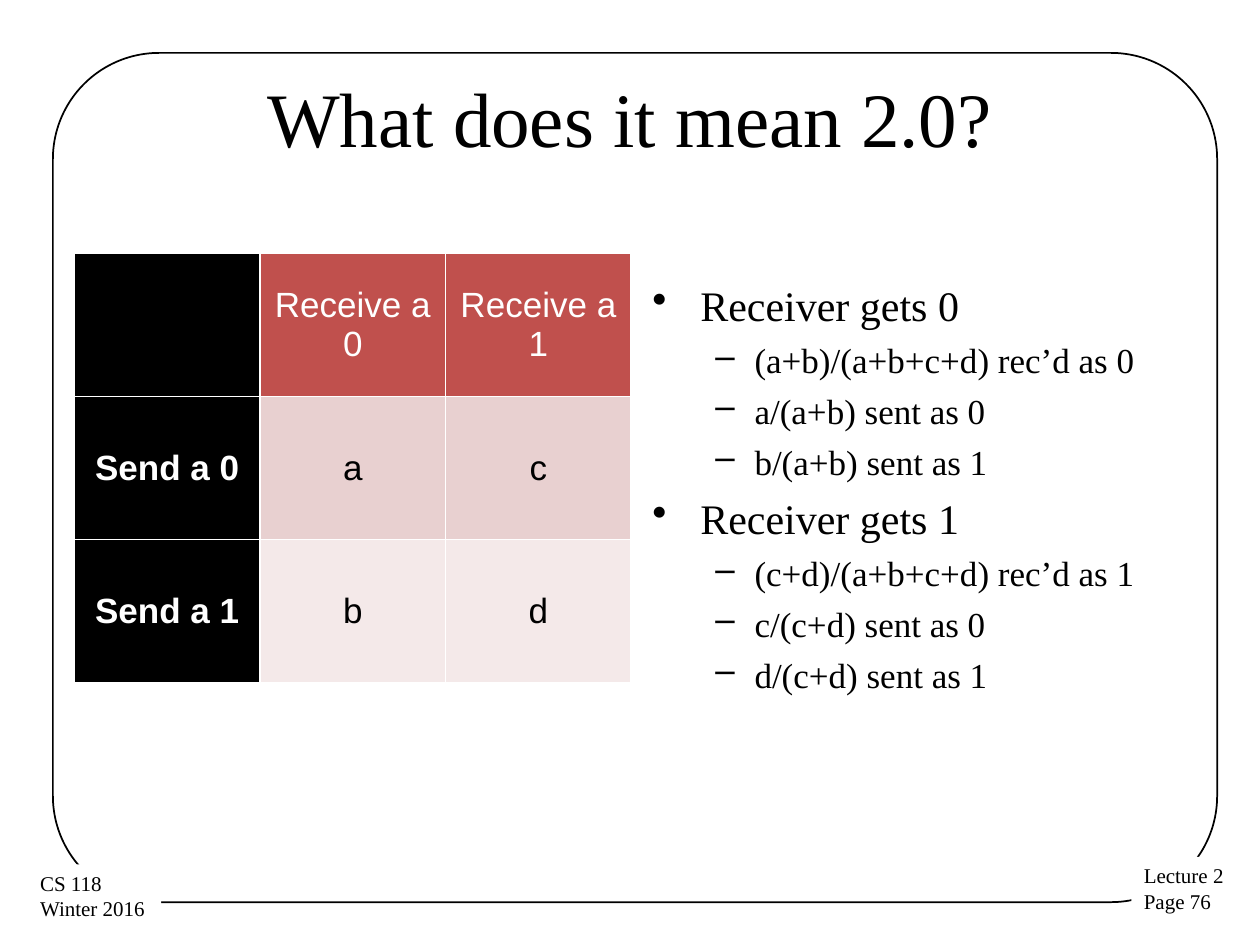
"""Build the slide on what a received bit says about the sent bit."""
from lxml import etree
from pptx import Presentation
from pptx import util as u
from pptx.dml.color import RGBColor
from pptx.enum import shapes, text
from pptx.oxml.ns import qn

SERIF, SANS = "Times New Roman", "Arial"
BLACK, WHITE, RED = "000000", "FFFFFF", "C0504D"
TITLE = "What does it mean 2.0?"
FOOTERS = [
    (("Lecture 2", "Page 76"), (8.98, 6.8, 0.84, 0.51)),
    (("CS 118", "Winter 2016"), (0.22, 6.86, 1.06, 0.51)),
]
TABLE = [
    ("", "Receive a 0", "Receive a 1"),
    ("Send a 0", "a", "c"),
    ("Send a 1", "b", "d"),
]
ROW_FILLS = [RED, "E8D0D0", "F4E9E9"]
OUTCOMES = [
    ("Receiver gets 0", ["(a+b)/(a+b+c+d) rec’d as 0", "a/(a+b) sent as 0", "b/(a+b) sent as 1"]),
    ("Receiver gets 1", ["(c+d)/(a+b+c+d) rec’d as 1", "c/(c+d) sent as 0", "d/(c+d) sent as 1"]),
]
LEVELS = [("•", 24, 0.38, -0.38), ("–", 20, 0.81, -0.31)]


def color(value):
    return RGBColor.from_string(value)


def inches(values):
    return [u.Inches(value) for value in values]


def paint(item, value):
    item.fill.solid()
    item.fill.fore_color.rgb = color(value)


def style(para, size, font=SERIF, ink=BLACK, bold=False):
    para.font.size = u.Pt(size)
    para.font.name = font
    para.font.color.rgb = color(ink)
    para.font.bold = bold
    for span in para.runs:
        span.font.size = u.Pt(size)
        span.font.name = font
        span.font.color.rgb = color(ink)
        span.font.bold = bold


def add_text(page, place, lines, size, wrap=True):
    box = page.shapes.add_textbox(*inches(place))
    frame = box.text_frame
    frame.word_wrap = wrap
    frame.text = "\n".join(lines)
    for para in frame.paragraphs:
        style(para, size)
    return box


def add_frame(page):
    box = page.shapes.add_shape(
        shapes.MSO_SHAPE.ROUNDED_RECTANGLE, *inches((0.42, 0.42, 9.24, 6.74)))
    box.adjustments[0] = 0.125
    box.shadow.inherit = False
    box.fill.background()
    box.line.color.rgb = color(BLACK)
    box.line.width = u.Pt(1)


def add_borders(cell):
    props = cell._tc.get_or_add_tcPr()
    for index, side in enumerate(("lnL", "lnR", "lnT", "lnB")):
        line = etree.Element(qn("a:" + side), w=str(u.Pt(1)))
        fill = etree.SubElement(line, qn("a:solidFill"))
        etree.SubElement(fill, qn("a:srgbClr"), val=WHITE)
        props.insert(index, line)


def add_grid(page):
    grid = page.shapes.add_table(3, 3, *inches((0.59, 2.01, 4.42, 3.41))).table
    for row, words in enumerate(TABLE):
        for column, word in enumerate(words):
            cell = grid.cell(row, column)
            cell.text = word
            cell.vertical_anchor = text.MSO_ANCHOR.MIDDLE
            cell.margin_left = cell.margin_right = u.Inches(0.06)
            cell.margin_top = cell.margin_bottom = u.Inches(0.04)
            para = cell.text_frame.paragraphs[0]
            para.alignment = text.PP_ALIGN.CENTER
            heading = row == 0 or column == 0
            style(para, 20, SANS, WHITE if heading else BLACK, row > 0 and column == 0)
            paint(cell, BLACK if column == 0 else ROW_FILLS[row])
            add_borders(cell)


def add_outcomes(page):
    items = []
    for heading, details in OUTCOMES:
        items += [(heading, 0)] + [(detail, 1) for detail in details]
    box = add_text(page, (5.08, 2.17, 4.42, 4.53), [words for words, _ in items], 24)
    for para, (_, level) in zip(box.text_frame.paragraphs, items):
        mark, size, margin, indent = LEVELS[level]
        para.level = level
        para.space_before = u.Pt(size / 4)
        style(para, size)
        props = para._p.get_or_add_pPr()
        props.set("marL", str(u.Inches(margin)))
        props.set("indent", str(u.Inches(indent)))
        bullet = etree.Element(qn("a:buChar"), char=mark)
        props.find(qn("a:spcBef")).addnext(bullet)


def main():
    deck = Presentation()
    deck.slide_width, deck.slide_height = inches((10, 7.5))
    page = deck.slides.add_slide(deck.slide_layouts[6])
    add_frame(page)
    for lines, place in FOOTERS:
        paint(add_text(page, place, lines, 12, wrap=False), WHITE)
    title = add_text(page, (0.5, 0.3, 9, 1.25), [TITLE], 44)
    title.text_frame.vertical_anchor = text.MSO_ANCHOR.MIDDLE
    title.text_frame.paragraphs[0].alignment = text.PP_ALIGN.CENTER
    add_grid(page)
    add_outcomes(page)
    deck.save("out.pptx")


if __name__ == "__main__":
    main()
